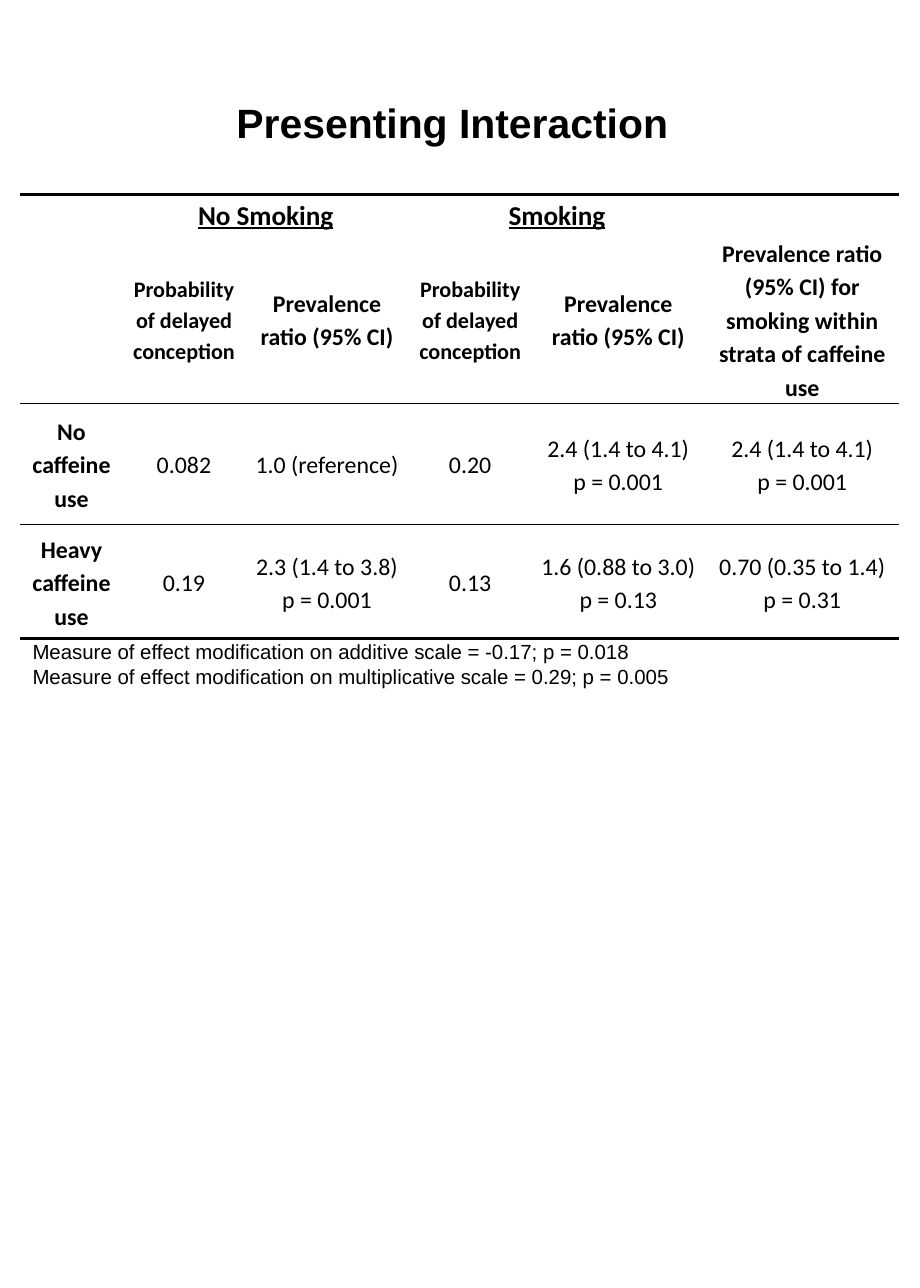
from lxml.etree import SubElement
from pptx import Presentation
from pptx.dml.color import RGBColor
from pptx.enum.text import MSO_ANCHOR, MSO_AUTO_SIZE, PP_ALIGN
from pptx.oxml.ns import qn
from pptx.util import Inches, Pt

BLACK = RGBColor(0, 0, 0)
PLAIN = "{2D5ABB26-0587-4C30-8999-92F81FD0307C}"  # table style without grid
HEAVY, THIN = 2.25, 0.25


def unit(count):
    """One grid step is a twelfth of an inch: the page is 90 by 126."""
    return Inches(count / 12)


class Page:
    sans, body = "Arial", "Calibri"

    def __init__(self, deck):
        self.slide = deck.slides.add_slide(deck.slide_layouts[6])

    def style(self, para, face, size, bold=False, line=False):
        font = para.font
        font.name, font.size, font.bold = face, Pt(size), bold
        font.underline = line
        font.color.rgb = BLACK

    def text(self, box, lines, size, bold=False, align=PP_ALIGN.LEFT, wrap=True):
        frame = self.slide.shapes.add_textbox(*map(unit, box)).text_frame
        frame.word_wrap = wrap
        frame.auto_size = MSO_AUTO_SIZE.NONE if wrap else MSO_AUTO_SIZE.SHAPE_TO_FIT_TEXT
        frame.vertical_anchor = MSO_ANCHOR.MIDDLE
        frame.text = "\n".join(lines)
        for para in frame.paragraphs:
            para.alignment = align
            self.style(para, self.sans, size, bold)

    def table(self, left, top, cols, rows):
        shape = self.slide.shapes.add_table(
            len(rows), len(cols), unit(left), unit(top), unit(sum(cols)), unit(sum(rows)))
        grid = shape.table
        grid.first_row = grid.horz_banding = False
        grid._tbl.tblPr.find(qn("a:tableStyleId")).text = PLAIN
        for col, wide in zip(grid.columns, cols):
            col.width = unit(wide)
        for row, high in zip(grid.rows, rows):
            row.height = unit(high)
        return grid

    def cell(self, cell, words, size, bold=False, line=False, anchor=MSO_ANCHOR.MIDDLE):
        cell.margin_left = cell.margin_right = Inches(0.07)
        cell.margin_top = cell.margin_bottom = 0
        cell.vertical_anchor = anchor
        cell.fill.background()
        cell.text = words
        para = cell.text_frame.paragraphs[0]
        para.alignment, para.line_spacing = PP_ALIGN.CENTER, 1.15
        self.style(para, self.body, size, bold, line)

    def rule(self, row, side, width):
        for cell in row.cells:
            props = cell._tc.get_or_add_tcPr()
            edge = SubElement(props, qn("a:" + side), w=str(Pt(width)))
            fill = SubElement(edge, qn("a:solidFill"))
            SubElement(fill, qn("a:srgbClr"), val=str(BLACK))
            props.insert(0, edge)


def main():
    deck = Presentation()
    deck.slide_width, deck.slide_height = unit(90), unit(126)
    page = Page(deck)

    # Title
    page.text((6, 4.9, 76.5, 14), ["Presenting Interaction"], 24, True, PP_ALIGN.CENTER)

    # Table of strata
    grid = page.table(2, 19, (10, 12, 16, 12, 17, 19), (4, 16.4, 11.9, 11.2))

    # Group heads, each across two columns
    groups = ("", "No Smoking", "", "Smoking", "", "")
    for col, words in enumerate(groups):
        page.cell(grid.cell(0, col), words, 16, True, True, MSO_ANCHOR.TOP)
        if words:
            grid.cell(0, col).merge(grid.cell(0, col + 1))

    # Column heads
    chance, ratio = "Probability of delayed conception", "Prevalence ratio (95% CI)"
    heads = ("", chance, ratio, chance, ratio,
             ratio + " for smoking within strata of caffeine use")
    for col, words in enumerate(heads):
        page.cell(grid.cell(1, col), words, 13 if words == chance else 14, True)

    # Results
    data = (
        ("No caffeine use", "0.082", "1.0 (reference)", "0.20",
         "2.4 (1.4 to 4.1)\vp = 0.001", "2.4 (1.4 to 4.1)\vp = 0.001"),
        ("Heavy caffeine use", "0.19", "2.3 (1.4 to 3.8)\vp = 0.001", "0.13",
         "1.6 (0.88 to 3.0)\vp = 0.13", "0.70 (0.35 to 1.4)\vp = 0.31"),
    )
    for row, line in enumerate(data, 2):
        for col, words in enumerate(line):
            page.cell(grid.cell(row, col), words, 14, bold=col == 0)

    # Rules
    for row, side, width in ((0, "lnT", HEAVY), (1, "lnB", THIN),
                             (2, "lnT", THIN), (3, "lnB", HEAVY)):
        page.rule(grid.rows[row], side, width)

    # Notes under the table
    page.text((2, 61.9, 65.4, 6.1), [
        "Measure of effect modification on additive scale = -0.17; p = 0.018",
        "Measure of effect modification on multiplicative scale = 0.29; p = 0.005",
    ], 12, wrap=False)

    deck.save("out.pptx")


if __name__ == "__main__":
    main()
